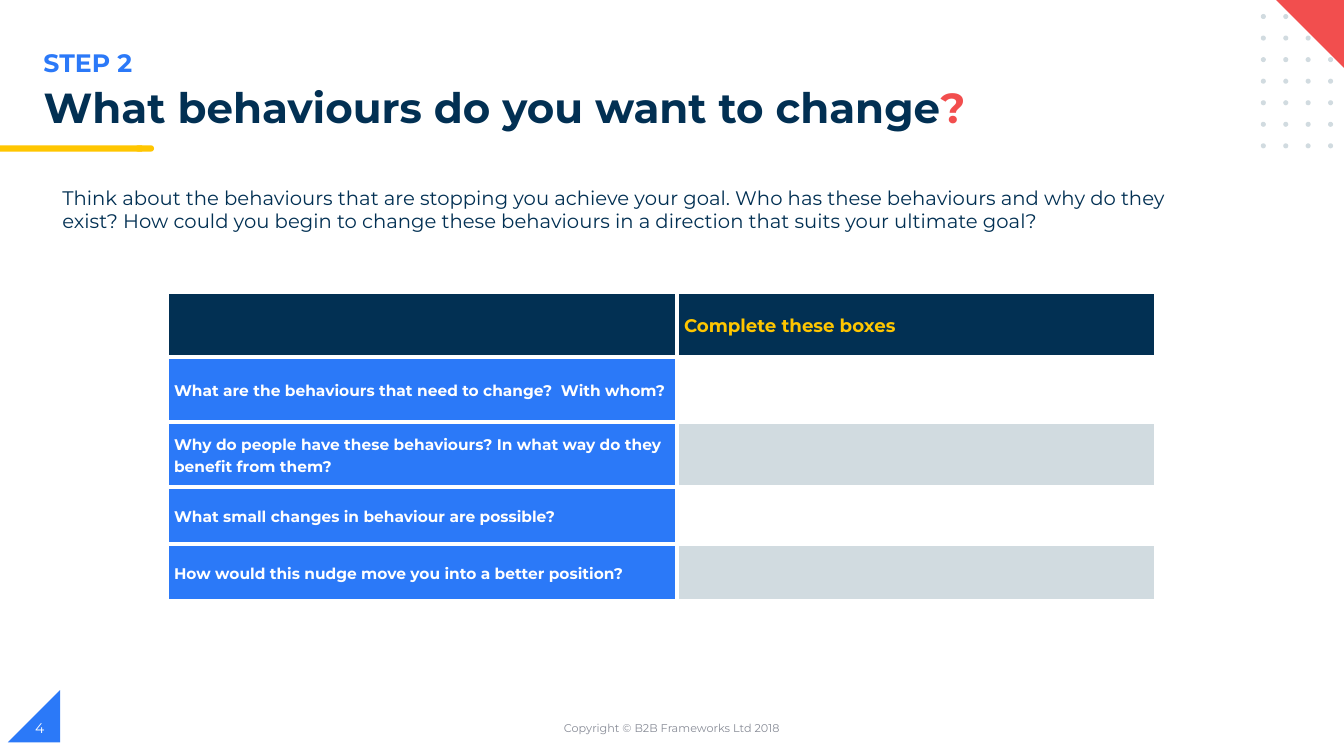
from dataclasses import dataclass

from lxml import etree
from pptx import Presentation
from pptx.dml.color import RGBColor
from pptx.enum import shapes, text
from pptx.oxml import ns
from pptx.util import Pt

KIND = shapes.MSO_SHAPE
ALIGN = text.PP_ALIGN
ANCHOR = text.MSO_ANCHOR


@dataclass(frozen=True)
class Theme:
    font: str = "Montserrat"
    navy: str = "023053"
    blue: str = "2B79F8"
    red: str = "F24E4E"
    gold: str = "FFC600"
    mist: str = "D1DBE0"
    gray: str = "888C97"
    white: str = "FFFFFF"
    title: float = 30
    step: float = 18
    intro: float = 14
    head: float = 13
    cell: float = 11
    page: float = 10
    foot: float = 8


@dataclass(frozen=True)
class Box:
    left: float
    top: float
    width: float
    height: float

    def pts(self) -> tuple:
        return Pt(self.left), Pt(self.top), Pt(self.width), Pt(self.height)


@dataclass(frozen=True)
class Mark:
    kind: int
    box: Box
    color: str
    turn: float = 0


@dataclass(frozen=True)
class Run:
    words: str
    size: float
    color: str
    bold: bool = False


@dataclass(frozen=True)
class Label:
    box: Box
    run: Run
    anchor: int = ANCHOR.TOP
    align: int = ALIGN.LEFT


T = Theme()


def rgb(color: str) -> RGBColor:
    return RGBColor.from_string(color)


def write(frame, runs: list, spacing: float = 1.0, align: int = ALIGN.LEFT) -> None:
    para = frame.paragraphs[0]
    para.alignment = align
    para.line_spacing = spacing
    for item in runs:
        run = para.add_run()
        run.text = item.words
        font = run.font
        font.name, font.size, font.bold = T.font, Pt(item.size), item.bold
        font.color.rgb = rgb(item.color)


def draw(slide, mark: Mark) -> None:
    shape = slide.shapes.add_shape(mark.kind, *mark.box.pts())
    shape.shadow.inherit = False
    shape.fill.solid()
    shape.fill.fore_color.rgb = rgb(mark.color)
    shape.line.fill.background()
    shape.rotation = mark.turn


def label(slide, item: Label) -> None:
    frame = slide.shapes.add_textbox(*item.box.pts()).text_frame
    frame.word_wrap = True
    frame.vertical_anchor = item.anchor
    write(frame, [item.run], align=item.align)


def border(cell, color: str, width: float) -> None:
    props = cell._tc.get_or_add_tcPr()
    for spot, side in enumerate(("lnL", "lnR", "lnT", "lnB")):
        line = etree.Element(ns.qn(f"a:{side}"), w=str(Pt(width)))
        fill = etree.SubElement(line, ns.qn("a:solidFill"))
        etree.SubElement(fill, ns.qn("a:srgbClr"), val=color)
        props.insert(spot, line)


def paint(cell, fill: str, run: Run | None) -> None:
    cell.fill.solid()
    cell.fill.fore_color.rgb = rgb(fill)
    border(cell, T.white, 3)
    cell.vertical_anchor = ANCHOR.MIDDLE
    cell.margin_left = cell.margin_right = Pt(5)
    cell.margin_top = cell.margin_bottom = 0
    if run:
        write(cell.text_frame, [run], 1.15)


def grid(slide, box: Box, cols: list, rows: list, asks: list) -> None:
    shape = slide.shapes.add_table(len(rows), len(cols), *box.pts())
    table = shape.table
    table.horz_banding = False
    for col, width in zip(table.columns, cols):
        col.width = Pt(width)
    for row, height in zip(table.rows, rows):
        row.height = Pt(height)
    paint(table.cell(0, 0), T.navy, None)
    paint(table.cell(0, 1), T.navy, Run("Complete these boxes", T.head, T.gold, True))
    for row, ask in enumerate(asks, 1):
        paint(table.cell(row, 0), T.blue, Run(ask, T.cell, T.white, True))
        paint(table.cell(row, 1), T.white if row % 2 else T.mist, None)


def main() -> None:
    deck = Presentation()
    deck.slide_width, deck.slide_height = Pt(960), Pt(540)
    slide = deck.slides.add_slide(deck.slide_layouts[5])

    # Page corner, title rule, dot grid and red corner
    marks = [
        Mark(KIND.RIGHT_TRIANGLE, Box(5.7, 493, 37.2, 37.2), T.blue, 270),
        Mark(KIND.FLOWCHART_TERMINATOR, Box(96.5, 103.8, 13.6, 4.5), T.gold),
        Mark(KIND.RECTANGLE, Box(0, 103.8, 101.5, 4.5), T.gold),
    ]
    marks += [
        Mark(KIND.OVAL, Box(900.6 + 16 * col, 10 + 15.4 * row, 3.6, 3.6), T.mist)
        for row in range(7) for col in range(4)
    ]
    marks.append(Mark(KIND.RIGHT_TRIANGLE, Box(911.5, 0, 48.5, 48.5), T.red, 180))
    for mark in marks:
        draw(slide, mark)

    # Title
    title = slide.shapes.title
    title.left, title.top, title.width, title.height = Box(24, 59, 803, 40).pts()
    frame = title.text_frame
    frame.word_wrap = True
    frame.auto_size = text.MSO_AUTO_SIZE.NONE
    frame.vertical_anchor = ANCHOR.TOP
    write(frame, [
        Run("What behaviours do you want to change", T.title, T.navy, True),
        Run("?", T.title, T.red, True),
    ], 0.9)

    # Step, introduction, copyright and page number
    intro = ("Think about the behaviours that are stopping you achieve your goal. "
             "Who has these behaviours and why do they exist? How could you begin to "
             "change these behaviours in a direction that suits your ultimate goal?")
    for item in (
        Label(Box(24, 30.5, 482, 29), Run("STEP 2", T.step, T.blue, True)),
        Label(Box(37.5, 129, 811, 41), Run(intro, T.intro, T.navy)),
        Label(Box(318, 505.5, 324, 28.8),
              Run("Copyright © B2B Frameworks Ltd 2018", T.foot, T.gray),
              ANCHOR.MIDDLE, ALIGN.CENTER),
        Label(Box(18, 505.5, 216, 28.8), Run("4", T.page, T.white), ANCHOR.MIDDLE),
    ):
        label(slide, item)

    # Worksheet table
    grid(slide, Box(119.3, 208.6, 706.3, 220.6), [364.3, 342],
         [46.4] * 3 + [40.7] * 2, [
        "What are the behaviours that need to change?  With whom?",
        "Why do people have these behaviours? In what way do they benefit from them?",
        "What small changes in behaviour are possible?",
        "How would this nudge move you into a better position?",
    ])

    deck.save("out.pptx")


if __name__ == "__main__":
    main()
